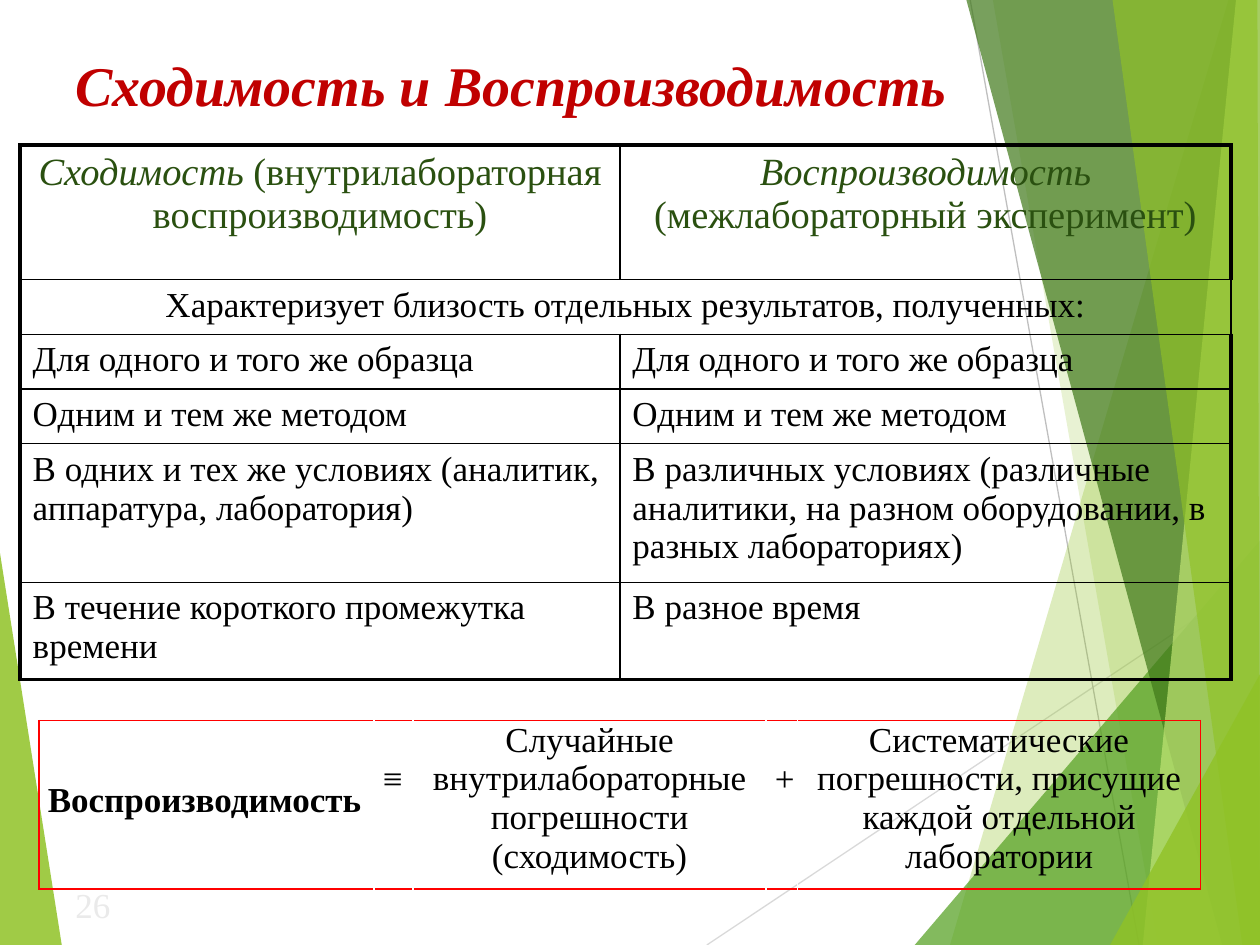
import dataclasses

import lxml.etree
import pptx
import pptx.dml.color
import pptx.enum.shapes
import pptx.enum.text
import pptx.oxml.ns
import pptx.util

Inches = pptx.util.Inches
Pt = pptx.util.Pt
Align = pptx.enum.text.PP_ALIGN
qn = pptx.oxml.ns.qn


@dataclasses.dataclass(frozen=True)
class Theme:
    font: str = "Times New Roman"
    title: str = "C00000"
    heading: str = "2A5010"
    ink: str = "000000"
    frame: str = "FF0000"
    paper: str = "FFFFFF"
    muted: str = "EAEAEA"
    lime: str = "90C226"
    pale: str = "C0E474"
    green: str = "54A021"
    forest: str = "3F7819"
    light_line: str = "D9D9D9"
    dark_line: str = "BFBFBF"
    title_size: int = 32
    heading_size: int = 22
    body_size: int = 20
    thick: float = 2.25
    thin: float = 1


def rgb(value):
    return pptx.dml.color.RGBColor.from_string(value)


class SlideBuilder:
    def __init__(self, slide, theme):
        self.shapes = slide.shapes
        self.theme = theme

    def polygon(self, points, color, opacity):
        corners = [(Inches(x), Inches(y)) for x, y in points]
        builder = self.shapes.build_freeform(*corners[0])
        builder.add_line_segments(corners[1:], close=True)
        shape = builder.convert_to_shape()
        shape.shadow.inherit = False
        shape.fill.solid()
        shape.fill.fore_color.rgb = rgb(color)
        shape.line.fill.background()
        fill_color = shape.fill._xPr.find(qn("a:solidFill"))[0]
        alpha = lxml.etree.SubElement(fill_color, qn("a:alpha"))
        alpha.set("val", str(opacity * 1000))

    def line(self, start, end, color):
        connector = self.shapes.add_connector(
            pptx.enum.shapes.MSO_CONNECTOR.STRAIGHT,
            *(Inches(value) for value in start + end))
        connector.line.color.rgb = rgb(color)
        connector.line.width = Pt(0.75)
        lxml.etree.SubElement(connector._element.spPr, qn("a:effectLst"))

    def add_span(self, para, text, size, color, bold=False, italic=False):
        span = para.add_run()
        span.text = text
        span.font.name = self.theme.font
        span.font.size = Pt(size)
        span.font.color.rgb = rgb(color)
        span.font.bold = bold
        span.font.italic = italic

    def text(self, place, text, size, color, top_inset=0.05, **style):
        box = self.shapes.add_textbox(*(Inches(value) for value in place))
        frame = box.text_frame
        frame.word_wrap = True
        frame.margin_top = Inches(top_inset)
        self.add_span(frame.paragraphs[0], text, size, color, **style)

    def table(self, place, columns, rows):
        holder = self.shapes.add_table(
            len(rows), len(columns), *(Inches(value) for value in place))
        table = holder.table
        table.first_row = False
        table.horz_banding = False
        for column, width in zip(table.columns, columns):
            column.width = Inches(width)
        for row, height in zip(table.rows, rows):
            row.height = Inches(height)
        return table

    def cell(self, cell, spans, align, margins):
        cell.margin_left = cell.margin_right = Inches(margins[0])
        cell.margin_top, cell.margin_bottom = Inches(margins[1]), Inches(margins[2])
        para = cell.text_frame.paragraphs[0]
        para.alignment = align
        for text, style in spans:
            self.add_span(para, text, **style)

    def borders(self, table, outer, inner):
        last_row, last_column = len(table.rows) - 1, len(table.columns) - 1
        for r in range(last_row + 1):
            for c in range(last_column + 1):
                cell = table.cell(r, c)
                properties = cell._tc.get_or_add_tcPr()
                edges = {"L": c == 0, "R": c == last_column,
                         "T": r == 0, "B": r == last_row}
                for side, is_outer in edges.items():
                    color, width = outer if is_outer else inner
                    edge = lxml.etree.SubElement(
                        properties, qn("a:ln" + side), w=str(Pt(width)))
                    fill = lxml.etree.SubElement(edge, qn("a:solidFill"))
                    lxml.etree.SubElement(fill, qn("a:srgbClr"), val=color)
                cell.fill.background()


def add_backdrop(page):
    theme = page.theme
    page.polygon([(0, 4.39), (0.49, 7.5), (0, 7.5)], theme.lime, 85)
    page.line((5.61, 7.5), (10, 4.57), theme.light_line)
    page.line((7.7, 0), (9.04, 7.5), theme.dark_line)
    facets = [
        ([(9.75, 0), (7.54, 7.5), (10, 7.5), (10, 0)], theme.lime, 30),
        ([(7.88, 0), (9.19, 7.5), (10, 7.5), (10, 0)], theme.lime, 20),
        ([(7.26, 7.5), (10, 4.29), (10, 7.5)], theme.green, 72),
        ([(7.67, 0), (9.7, 7.5), (10, 7.5), (10, 0)], theme.forest, 70),
        ([(9.81, 0), (9.07, 7.5), (10, 7.5), (10, 0)], theme.pale, 70),
        ([(8.83, 0), (9.86, 7.5), (10, 7.5), (9.98, 0)], theme.lime, 65),
        ([(8.81, 7.5), (10, 5.35), (10, 7.5)], theme.lime, 80),
    ]
    for points, color, opacity in facets:
        page.polygon(points, color, opacity)


def add_comparison(page):
    theme = page.theme
    heading = dict(size=theme.heading_size, color=theme.heading)
    body = dict(size=theme.body_size, color=theme.ink)
    margins = (0.1, 0.05, 0.05)
    headings = [("Сходимость ", "(внутрилабораторная воспроизводимость)"),
                ("Воспроизводимость ", "(межлабораторный эксперимент)")]
    conditions = [
        ("Для одного и того же образца", "Для одного и того же образца"),
        ("Одним и тем же методом", "Одним и тем же методом"),
        ("В одних и тех же условиях (аналитик, аппаратура, лаборатория)",
         "В различных условиях (различные аналитики, на разном оборудовании, "
         "в разных лабораториях)"),
        ("В течение короткого промежутка времени", "В разное время"),
    ]
    table = page.table((0.16, 1.15, 9.61, 4.24), [4.76, 4.85],
                       [1.07, 0.43, 0.43, 0.43, 1.1, 0.77])
    for c, (term, note) in enumerate(headings):
        spans = [(term, dict(heading, italic=True)), (note, heading)]
        page.cell(table.cell(0, c), spans, Align.CENTER, margins)
    table.cell(1, 0).merge(table.cell(1, 1))
    common = "Характеризует близость отдельных результатов, полученных:"
    page.cell(table.cell(1, 0), [(common, body)], Align.CENTER, margins)
    for r, pair in enumerate(conditions, start=2):
        for c, text in enumerate(pair):
            page.cell(table.cell(r, c), [(text, body)], Align.LEFT, margins)
    page.borders(table, (theme.ink, theme.thick), (theme.ink, theme.thin))


def add_equation(page):
    theme = page.theme
    body = dict(size=theme.body_size, color=theme.ink)
    terms = [
        ("Воспроизводимость", dict(body, bold=True), Align.LEFT, 0.48),
        ("≡", body, Align.LEFT, 0.31),
        ("Случайные внутрилабораторные погрешности (сходимость)",
         body, Align.CENTER, 0),
        ("+", body, Align.LEFT, 0.31),
        ("Систематические погрешности, присущие каждой отдельной лаборатории",
         body, Align.CENTER, 0),
    ]
    table = page.table((0.31, 5.72, 9.22, 1.17), [2.66, 0.31, 2.8, 0.25, 3.2], [1.17])
    for c, (text, style, align, top) in enumerate(terms):
        page.cell(table.cell(0, c), [(text, style)], align, (0.07, top, 0))
    page.borders(table, (theme.frame, theme.thin), (theme.paper, theme.thin))


def main():
    deck = pptx.Presentation()
    deck.slide_width, deck.slide_height = Inches(10), Inches(7.5)
    theme = Theme()
    page = SlideBuilder(deck.slides.add_slide(deck.slide_layouts[6]), theme)
    add_backdrop(page)
    page.text((0.5, 0.29, 9, 0.86), "Сходимость и Воспроизводимость",
              theme.title_size, theme.title, top_inset=0.11, bold=True, italic=True)
    add_comparison(page)
    add_equation(page)
    page.text((0.5, 6.96, 0.8, 0.4), "26", theme.body_size, theme.muted)
    deck.save("out.pptx")


if __name__ == "__main__":
    main()
